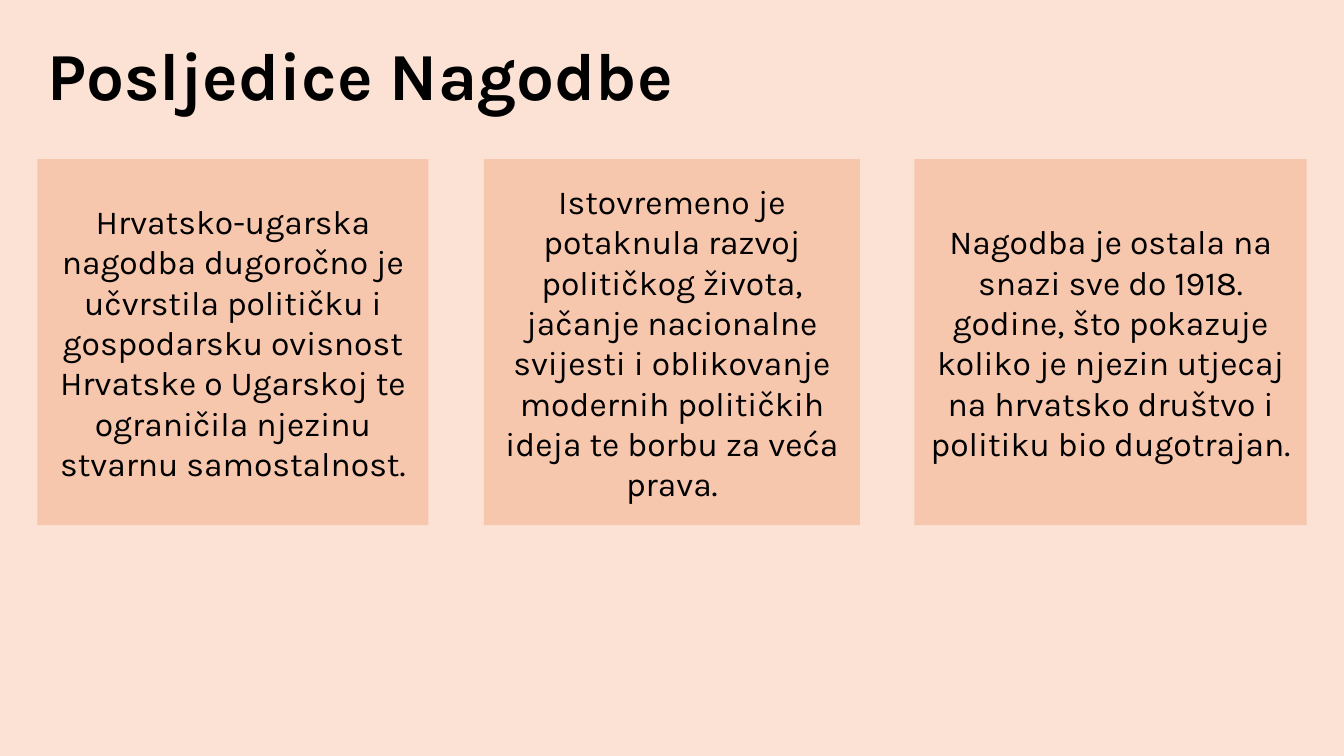
from dataclasses import dataclass

from pptx import Presentation
from pptx.dml.color import RGBColor
from pptx.enum.shapes import MSO_SHAPE
from pptx.enum.text import MSO_ANCHOR, MSO_AUTO_SIZE, PP_ALIGN
from pptx.util import Inches, Pt

RECTANGLE = MSO_SHAPE.RECTANGLE
LEFT, CENTER = PP_ALIGN.LEFT, PP_ALIGN.CENTER
MIDDLE, BOTTOM = MSO_ANCHOR.MIDDLE, MSO_ANCHOR.BOTTOM
NO_AUTOFIT = MSO_AUTO_SIZE.NONE
TITLE_ONLY = 5


@dataclass(frozen=True)
class Theme:
    font: str = "Karla"
    background: RGBColor = RGBColor(0xFB, 0xE2, 0xD5)
    card: RGBColor = RGBColor(0xF6, 0xC6, 0xAD)
    text: RGBColor = RGBColor(0, 0, 0)
    title_size: int = 48
    body_size: int = 24


THEME = Theme()
CARD_TOP, CARD_HEIGHT = 1.58, 3.63
# left, width, text
CARDS = [
    (0.37, 3.88, "Hrvatsko-ugarska nagodba dugoročno je učvrstila političku i "
                 "gospodarsku ovisnost Hrvatske o Ugarskoj te ograničila "
                 "njezinu stvarnu samostalnost."),
    (4.8, 3.73, "Istovremeno je potaknula razvoj političkog života, jačanje "
                "nacionalne svijesti i oblikovanje modernih političkih ideja "
                "te borbu za veća prava."),
    (9.07, 3.89, "Nagodba je ostala na snazi sve do 1918. godine, što pokazuje "
                 "koliko je njezin utjecaj na hrvatsko društvo i politiku bio "
                 "dugotrajan."),
]


def write_text(shape, text, size=THEME.body_size, bold=False, align=CENTER,
               anchor=MIDDLE, line_spacing=1.0):
    tf = shape.text_frame
    tf.word_wrap = True
    tf.auto_size = NO_AUTOFIT
    tf.vertical_anchor = anchor
    p = tf.paragraphs[0]
    p.alignment = align
    p.line_spacing = line_spacing
    r = p.add_run()
    r.text = text
    r.font.name = THEME.font
    r.font.size = Pt(size)
    r.font.bold = bold
    r.font.color.rgb = THEME.text


def set_title(s, text):
    title = s.shapes.title
    title.left, title.top = Inches(0.37), Inches(0.25)
    title.width, title.height = Inches(10.55), Inches(0.94)
    write_text(title, text, size=THEME.title_size, bold=True, align=LEFT,
               anchor=BOTTOM, line_spacing=0.9)


def add_card(s, left, width, text):
    card = s.shapes.add_shape(RECTANGLE, Inches(left), Inches(CARD_TOP),
                              Inches(width), Inches(CARD_HEIGHT))
    card.shadow.inherit = False
    card.fill.solid()
    card.fill.fore_color.rgb = THEME.card
    card.line.fill.background()
    write_text(card, text)


def main():
    prs = Presentation()
    prs.slide_width, prs.slide_height = Inches(13.33), Inches(7.5)
    s = prs.slides.add_slide(prs.slide_layouts[TITLE_ONLY])
    s.background.fill.solid()
    s.background.fill.fore_color.rgb = THEME.background
    set_title(s, "Posljedice Nagodbe")
    for left, width, text in CARDS:
        add_card(s, left, width, text)
    prs.save("out.pptx")


if __name__ == "__main__":
    main()
